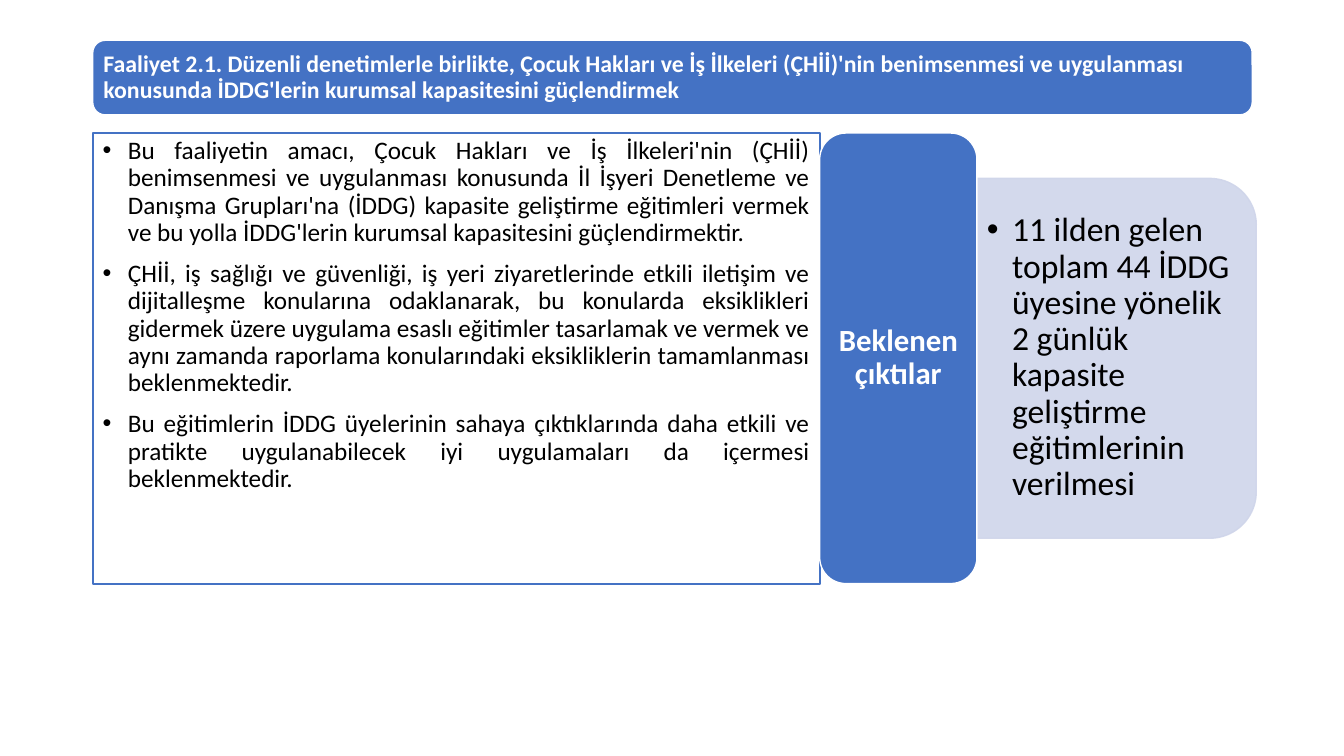
from dataclasses import dataclass

from lxml import etree
from pptx import Presentation
from pptx.dml.color import RGBColor
from pptx.enum import shapes, text
from pptx.oxml import ns
from pptx.util import Inches, Pt

BLUE = RGBColor(0x44, 0x72, 0xC4)
PALE_BLUE = RGBColor(0xCF, 0xD5, 0xEA)
WHITE = RGBColor(0xFF, 0xFF, 0xFF)
BLACK = RGBColor(0, 0, 0)
FONT = "Calibri"
Kind = shapes.MSO_SHAPE


@dataclass(frozen=True)
class Panel:
    kind: Kind
    box: tuple[float, float, float, float]
    fill: RGBColor | None = None
    line: RGBColor | None = None
    line_width: float = 1
    rotation: float = 0
    opacity: int = 100


@dataclass(frozen=True)
class Copy:
    paragraphs: tuple[str, ...]
    size: float
    color: RGBColor = BLACK
    bold: bool = False
    bulleted: bool = False
    align: text.PP_ALIGN = text.PP_ALIGN.LEFT
    anchor: text.MSO_ANCHOR = text.MSO_ANCHOR.MIDDLE
    insets: tuple[float, float] = (0.1, 0.05)


def set_opacity(fill, percent: int) -> None:
    """Add an alpha value to a solid fill."""
    color = fill._xPr.find(ns.qn("a:solidFill"))[0]
    etree.SubElement(color, ns.qn("a:alpha"), val=str(percent * 1000))


def add_bullet(paragraph) -> None:
    properties = paragraph._p.get_or_add_pPr()
    properties.set("marL", str(Inches(0.25)))
    properties.set("indent", str(Inches(-0.25)))
    etree.SubElement(properties, ns.qn("a:buFont"), typeface="Arial")
    etree.SubElement(properties, ns.qn("a:buChar"), char="•")


def draw_panel(slide, panel: Panel):
    shape = slide.shapes.add_shape(panel.kind, *map(Inches, panel.box))
    shape.shadow.inherit = False
    shape.rotation = panel.rotation
    if panel.fill is None:
        shape.fill.background()
    else:
        shape.fill.solid()
        shape.fill.fore_color.rgb = panel.fill
    shape.line.color.rgb = panel.line
    shape.line.width = Pt(panel.line_width)
    if panel.opacity < 100:
        set_opacity(shape.fill, panel.opacity)
        set_opacity(shape.line.fill, panel.opacity)
    return shape


def write(shape, copy: Copy) -> None:
    frame = shape.text_frame
    frame.word_wrap = True
    frame.vertical_anchor = copy.anchor
    frame.margin_left = frame.margin_right = Inches(copy.insets[0])
    frame.margin_top = frame.margin_bottom = Inches(copy.insets[1])
    for index, words in enumerate(copy.paragraphs):
        paragraph = frame.add_paragraph() if index else frame.paragraphs[0]
        paragraph.add_run().text = words
        if copy.bulleted:
            add_bullet(paragraph)
        paragraph.alignment = copy.align
        paragraph.line_spacing = 0.9
        if index:
            paragraph.space_before = Pt(10)
        font = paragraph.font
        font.name, font.size, font.bold = FONT, Pt(copy.size), copy.bold
        font.color.rgb = copy.color


# Activity title
TITLE_PANEL = Panel(Kind.ROUNDED_RECTANGLE, (0.92, 0.4, 11.5, 0.74), BLUE, WHITE)
TITLE = Copy(
    ("Faaliyet 2.1. Düzenli denetimlerle birlikte, Çocuk Hakları ve İş İlkeleri "
     "(ÇHİİ)'nin benimsenmesi ve uygulanması konusunda İDDG'lerin kurumsal "
     "kapasitesini güçlendirmek",),
    17, WHITE, bold=True, insets=(0.07, 0.07))

# Purpose of the activity
PURPOSE_PANEL = Panel(Kind.RECTANGLE, (0.92, 1.32, 7.21, 4.47), line=BLUE, line_width=1.5)
PURPOSE = Copy(
    ("Bu faaliyetin amacı, Çocuk Hakları ve İş İlkeleri'nin (ÇHİİ) benimsenmesi ve "
     "uygulanması konusunda İl İşyeri Denetleme ve Danışma Grupları'na (İDDG) kapasite "
     "geliştirme eğitimleri vermek ve bu yolla İDDG'lerin kurumsal kapasitesini "
     "güçlendirmektir.",
     "ÇHİİ, iş sağlığı ve güvenliği, iş yeri ziyaretlerinde etkili iletişim ve "
     "dijitalleşme konularına odaklanarak, bu konularda eksiklikleri gidermek üzere "
     "uygulama esaslı eğitimler tasarlamak ve vermek ve aynı zamanda raporlama "
     "konularındaki eksikliklerin tamamlanması beklenmektedir.",
     "Bu eğitimlerin İDDG üyelerinin sahaya çıktıklarında daha etkili ve pratikte "
     "uygulanabilecek iyi uygulamaları da içermesi beklenmektedir."),
    18, bulleted=True, align=text.PP_ALIGN.JUSTIFY, anchor=text.MSO_ANCHOR.TOP)

# Expected outputs
OUTPUT_PANEL = Panel(Kind.ROUND_2_SAME_RECTANGLE, (9.29, 2.17, 3.57, 2.77),
                     PALE_BLUE, PALE_BLUE, rotation=90, opacity=90)
OUTPUT_BOX = (9.69, 1.9, 2.64, 3.3)
OUTPUT = Copy(
    ("11 ilden gelen toplam 44 İDDG üyesine yönelik 2 günlük kapasite geliştirme "
     "eğitimlerinin verilmesi",),
    24, bulleted=True)
LABEL_PANEL = Panel(Kind.ROUNDED_RECTANGLE, (8.13, 1.32, 1.56, 4.47), BLUE, WHITE)
LABEL = Copy(("Beklenen çıktılar",), 22, WHITE, bold=True,
             align=text.PP_ALIGN.CENTER, insets=(0.09, 0.05))


def main() -> None:
    deck = Presentation()
    deck.slide_width, deck.slide_height = Inches(13.33), Inches(7.5)
    slide = deck.slides.add_slide(deck.slide_layouts[6])

    write(draw_panel(slide, TITLE_PANEL), TITLE)
    write(draw_panel(slide, PURPOSE_PANEL), PURPOSE)
    # The output text stays upright over its turned panel
    draw_panel(slide, OUTPUT_PANEL)
    write(slide.shapes.add_textbox(*map(Inches, OUTPUT_BOX)), OUTPUT)
    write(draw_panel(slide, LABEL_PANEL), LABEL)

    deck.save("out.pptx")


if __name__ == "__main__":
    main()
